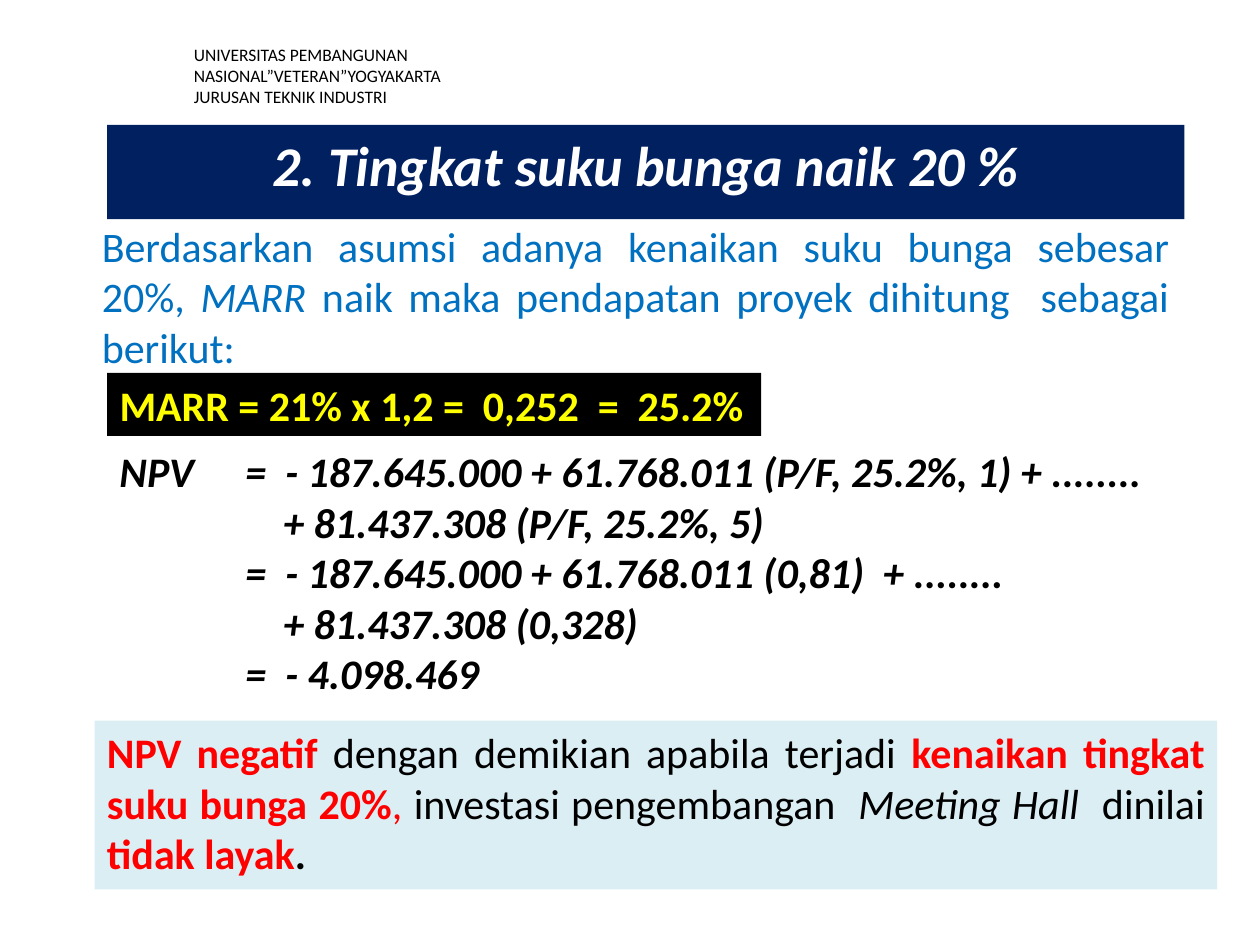
from pptx import Presentation
from pptx.dml.color import RGBColor
from pptx.enum.shapes import MSO_SHAPE
from pptx.enum.text import MSO_ANCHOR, PP_ALIGN
from pptx.util import Inches, Pt

THEME = {
    "font": "Calibri",
    "small": 10, "body": 24, "title": 32,
    "black": "000000", "white": "FFFFFF", "navy": "002060", "blue": "0070C0",
    "red": "FF0000", "yellow": "FFFF00", "pale": "DBEEF4",
}

prs = Presentation()
prs.slide_width, prs.slide_height = Inches(10), Inches(7.5)
COL, ROW = prs.slide_width / 100, prs.slide_height / 75
s = prs.slides.add_slide(prs.slide_layouts[6])


def add_box(at, size, paragraphs, fill=None, align=PP_ALIGN.LEFT):
    x, y, w, h = at
    place = [int(v) for v in (x * COL, y * ROW, w * COL, h * ROW)]
    if fill:
        sp = s.shapes.add_shape(MSO_SHAPE.RECTANGLE, *place)
        sp.shadow.inherit = False
        sp.fill.solid()
        sp.fill.fore_color.rgb = RGBColor.from_string(THEME[fill])
        sp.line.fill.background()
    else:
        sp = s.shapes.add_textbox(*place)
    tf = sp.text_frame
    tf.word_wrap = True
    tf.vertical_anchor = MSO_ANCHOR.TOP
    for i, runs in enumerate(paragraphs):
        p = tf.add_paragraph() if i else tf.paragraphs[0]
        p.alignment = align
        for text, color, style in runs:
            r = p.add_run()
            r.text = text
            r.font.name = THEME["font"]
            r.font.size = Pt(THEME[size])
            r.font.color.rgb = RGBColor.from_string(THEME[color])
            r.font.bold = "b" in style
            r.font.italic = "i" in style
    return tf


add_box((14.4, 3, 35.9, 4.4), "small", [
    [("UNIVERSITAS PEMBANGUNAN NASIONAL”VETERAN”YOGYAKARTA", "black", "")],
    [("JURUSAN TEKNIK INDUSTRI", "black", "")],
])

add_box((7.1, 17, 86.7, 6.7), "body", [[
    ("Berdasarkan asumsi adanya kenaikan suku bunga sebesar 20%, ", "blue", ""),
    ("MARR ", "blue", "i"),
    ("naik maka pendapatan proyek dihitung  sebagai berikut:", "blue", ""),
]], align=PP_ALIGN.JUSTIFY)

add_box((7.5, 57.2, 89.1, 13.4), "body", [[
    ("NPV negatif ", "red", "b"),
    ("dengan demikian apabila terjadi ", "black", ""),
    ("kenaikan tingkat suku bunga 20%", "red", "b"),
    (", ", "red", ""),
    ("investasi pengembangan  ", "black", ""),
    ("Meeting Hall ", "black", "i"),
    (" dinilai ", "black", ""),
    ("tidak layak", "red", "b"),
    (".", "black", "b"),
]], fill="pale", align=PP_ALIGN.JUSTIFY)

add_box((8.5, 9.9, 85.5, 7.5), "title",
        [[("2. Tingkat suku bunga naik 20 %", "white", "bi")]],
        fill="navy", align=PP_ALIGN.CENTER)

add_box((8.5, 29.6, 51.9, 5), "body",
        [[("MARR = 21% x 1,2 =  0,252  =  25.2%", "yellow", "b")]], fill="black")

npv_lines = [
    ("NPV\t=  - 187.645.000 + 61.768.011 (P/F, 25.2%, 1) + ........", 10, -10),
    ("+ 81.437.308 (P/F, 25.2%, 5)", 13, 0),
    ("=  - 187.645.000 + 61.768.011 (0,81)  + ........", 10, 0),
    ("+ 81.437.308 (0,328)", 13, 0),
    ("=  - 4.098.469", 10, 0),
]
tf = add_box((8.5, 34.9, 83.7, 21.2), "body",
             [[(text, "black", "bi")] for text, _, _ in npv_lines])
for p, (_, margin, indent) in zip(tf.paragraphs, npv_lines):
    pPr = p._p.get_or_add_pPr()
    pPr.set("marL", str(int(margin * COL)))
    pPr.set("indent", str(int(indent * COL)))

prs.save("out.pptx")
